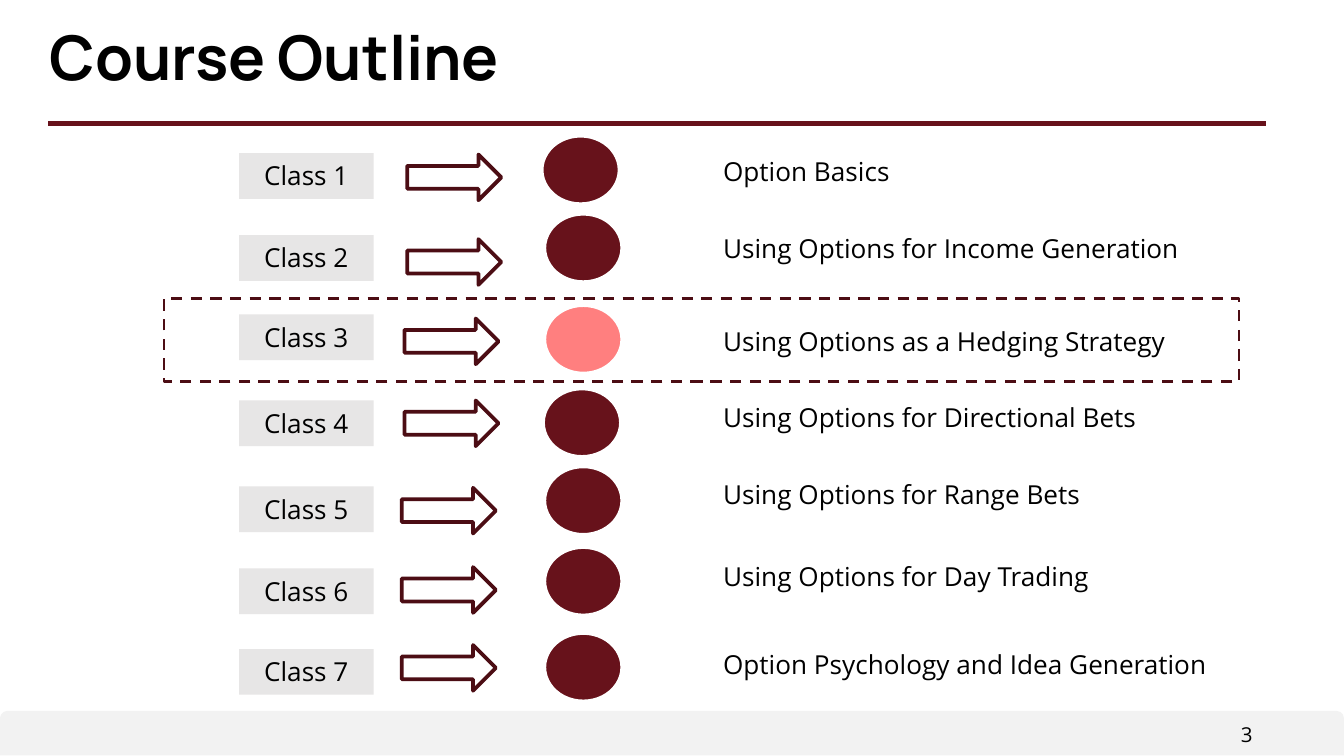
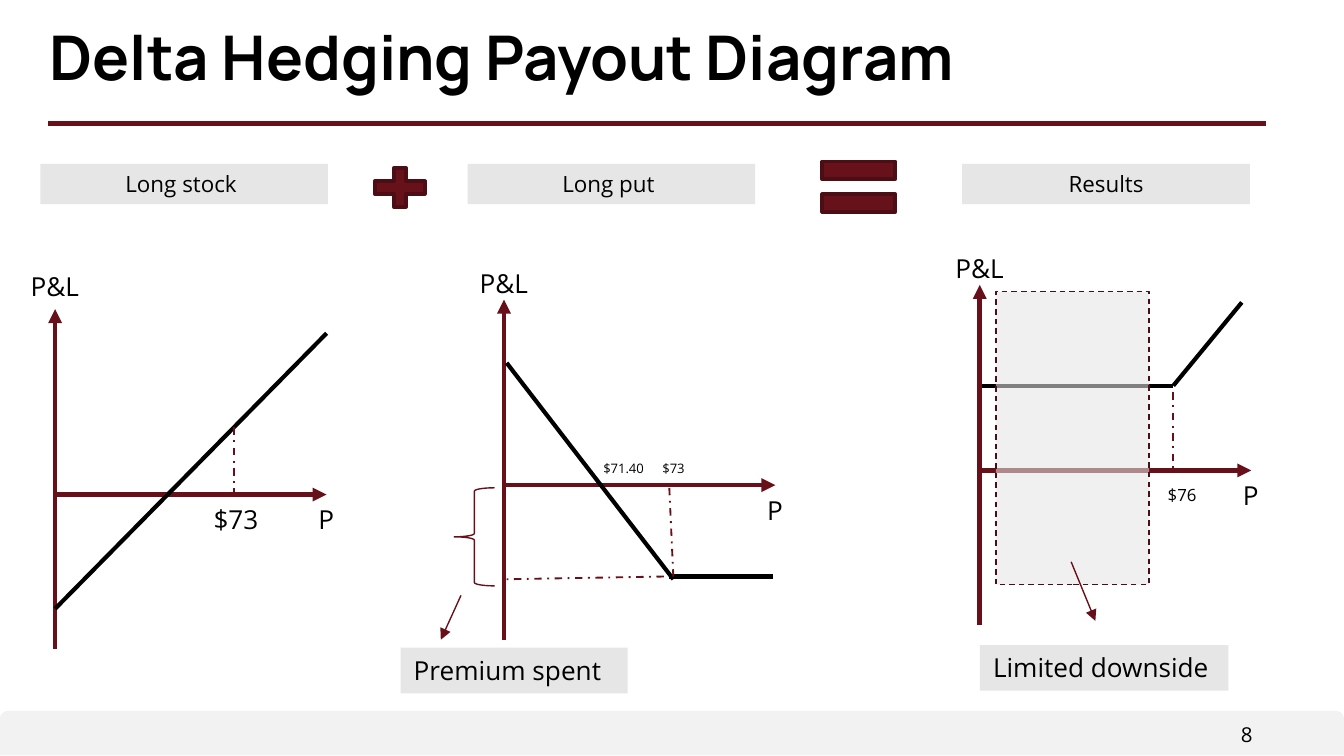
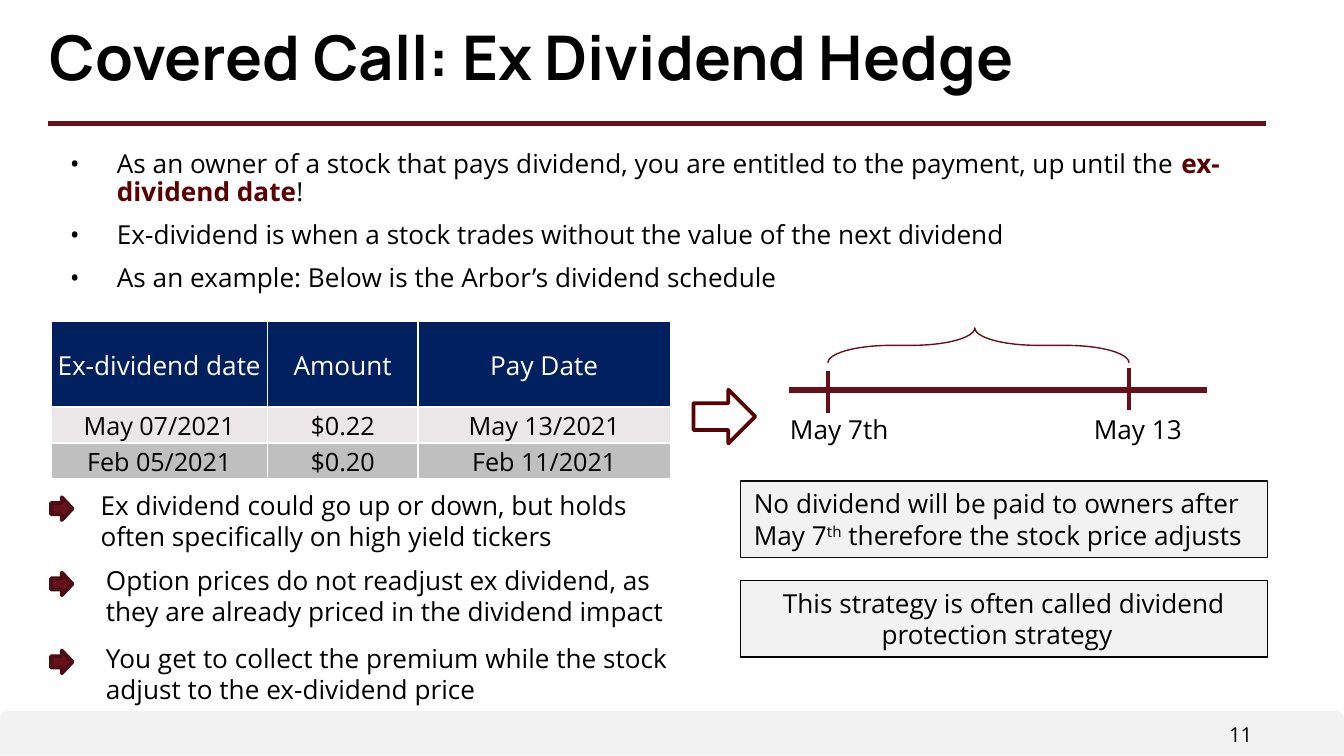
from dataclasses import dataclass
from typing import Optional, Sequence, Union

from lxml.etree import SubElement
from pptx import Presentation
from pptx.dml.color import RGBColor
from pptx.enum.dml import MSO_LINE_DASH_STYLE as Dash
from pptx.enum.shapes import MSO_CONNECTOR as Connector, MSO_SHAPE as Preset
from pptx.enum.text import MSO_ANCHOR as Anchor, MSO_AUTO_SIZE as AutoSize, PP_ALIGN as Align
from pptx.oxml.ns import qn
from pptx.util import Inches, Pt

# Shared style
SLIDE_WIDTH = Inches(10)
SLIDE_HEIGHT = SLIDE_WIDTH * 9 // 16
BLACK = RGBColor(0x00, 0x00, 0x00)
WHITE = RGBColor(0xFF, 0xFF, 0xFF)
MAROON = RGBColor(0x67, 0x12, 0x1B)
AXIS_RED = RGBColor(0x67, 0x10, 0x19)
DARK_RED = RGBColor(0x4C, 0x0D, 0x14)
ACCENT_RED = RGBColor(0x5A, 0x00, 0x00)
RED = RGBColor(0xFF, 0x00, 0x00)
LABEL_GRAY = RGBColor(0xE7, 0xE6, 0xE6)
BAND_GRAY = RGBColor(0xF2, 0xF2, 0xF2)
NAVY = RGBColor(0x00, 0x20, 0x60)
ROW_LIGHT = RGBColor(0xEB, 0xE7, 0xE8)
ROW_GRAY = RGBColor(0xBF, 0xBF, 0xBF)
NOTE_EDGE = RGBColor(0x0D, 0x0D, 0x0D)
TITLE_FONT = "Manrope"
BODY_FONT = "Open Sans"
DEFAULT_INSETS = (0.1, 0.05, 0.1, 0.05)
SLIM_INSETS = (0.07, 0.04, 0.07, 0.04)


@dataclass(frozen=True)
class Box:
    left: float
    top: float
    width: float
    height: float

    def lengths(self) -> list:
        return [Inches(v) for v in (self.left, self.top, self.width, self.height)]


@dataclass(frozen=True)
class Stroke:
    color: RGBColor
    width: float
    dash: Optional[Dash] = None


@dataclass(frozen=True)
class Span:
    text: str
    bold: bool = False
    color: Optional[RGBColor] = None
    raised: bool = False


@dataclass(frozen=True)
class TextStyle:
    size: float = 14
    align: Align = Align.LEFT
    anchor: Anchor = Anchor.TOP
    insets: tuple = DEFAULT_INSETS
    spacing: Optional[float] = None
    font: str = BODY_FONT
    bold: bool = False
    bullet: bool = False


Paragraph = Union[str, Sequence[Span]]
PLAIN = TextStyle()
CENTERED = TextStyle(align=Align.CENTER)
HEADING = TextStyle(12, Align.CENTER)
TITLE = TextStyle(33, insets=SLIM_INSETS, spacing=0.9, font=TITLE_FONT, bold=True)
TOPIC = TextStyle(anchor=Anchor.MIDDLE, insets=(0, 0.03, 0, 0.03), spacing=0.9)
BULLETS = TextStyle(insets=SLIM_INSETS, spacing=0.9, bullet=True)
PAGE_NUMBER = TextStyle(11, Align.RIGHT, insets=SLIM_INSETS)

AXIS = Stroke(AXIS_RED, 2.5)
PAYOFF = Stroke(BLACK, 2.25)
GUIDE = Stroke(AXIS_RED, 1, Dash.DASH_DOT)
THIN = Stroke(AXIS_RED, 0.75)
OUTLINE = Stroke(DARK_RED, 2)


# Drawing helpers
def add_bullet(paragraph) -> None:
    properties = paragraph._p.get_or_add_pPr()
    properties.set("marL", str(Inches(0.5)))
    properties.set("indent", str(Inches(-0.35)))
    color = SubElement(properties, qn("a:buClr"))
    SubElement(color, qn("a:srgbClr"), val=str(BLACK))
    SubElement(properties, qn("a:buFont"), typeface=BODY_FONT)
    SubElement(properties, qn("a:buChar"), char="•")


def write(frame, paragraphs: Sequence[Paragraph], style: TextStyle) -> None:
    frame.word_wrap = True
    frame.auto_size = AutoSize.NONE
    frame.vertical_anchor = style.anchor
    (frame.margin_left, frame.margin_top,
     frame.margin_right, frame.margin_bottom) = [Inches(v) for v in style.insets]
    for index, spans in enumerate(paragraphs):
        paragraph = frame.add_paragraph() if index else frame.paragraphs[0]
        paragraph.alignment = style.align
        if style.spacing:
            paragraph.line_spacing = style.spacing
        if style.bullet:
            add_bullet(paragraph)
            if index:
                paragraph.space_before = Pt(8)
        font = paragraph.font
        font.name, font.size, font.bold = style.font, Pt(style.size), style.bold
        font.color.rgb = BLACK
        for span in [Span(spans)] if isinstance(spans, str) else spans:
            run = paragraph.add_run()
            run.text = span.text
            if span.bold:
                run.font.bold = True
            if span.color:
                run.font.color.rgb = span.color
            if span.raised:
                run._r.get_or_add_rPr().set("baseline", "30000")


def add_text(slide, box: Box, paragraphs: Sequence[Paragraph], style: TextStyle = PLAIN) -> None:
    write(slide.shapes.add_textbox(*box.lengths()).text_frame, paragraphs, style)


def apply_stroke(line, stroke: Stroke) -> None:
    line.color.rgb = stroke.color
    line.width = Pt(stroke.width)
    if stroke.dash:
        line.dash_style = stroke.dash


def add_preset(slide, preset: Preset, box: Box, fill: Optional[RGBColor] = None,
               stroke: Optional[Stroke] = None, opacity: int = 100):
    shape = slide.shapes.add_shape(preset, *box.lengths())
    shape.shadow.inherit = False
    if fill is None:
        shape.fill.background()
    else:
        shape.fill.solid()
        shape.fill.fore_color.rgb = fill
        if opacity < 100:
            color = shape._element.spPr.find(qn("a:solidFill"))[0]
            SubElement(color, qn("a:alpha"), val=str(opacity * 1000))
    if stroke:
        apply_stroke(shape.line, stroke)
    else:
        shape.line.fill.background()
    return shape


def add_label(slide, box: Box, paragraph: Paragraph, style: TextStyle = PLAIN,
              fill: RGBColor = LABEL_GRAY, stroke: Optional[Stroke] = None) -> None:
    label = add_preset(slide, Preset.RECTANGLE, box, fill, stroke)
    write(label.text_frame, [paragraph], style)


def add_line(slide, start: tuple, end: tuple, stroke: Stroke, arrow: bool = False) -> None:
    line = slide.shapes.add_connector(
        Connector.STRAIGHT, *[Inches(v) for v in (*start, *end)])
    apply_stroke(line.line, stroke)
    if arrow:
        SubElement(line.line._get_or_add_ln(), qn("a:tailEnd"), type="triangle")
    SubElement(line._element.spPr, qn("a:effectLst"))


def add_titled_slide(deck, title: str, number: int):
    slide = deck.slides.add_slide(deck.slide_layouts[5])
    # Footer band, page number and title rule
    add_preset(slide, Preset.ROUND_2_SAME_RECTANGLE, Box(0, 5.29, 10, 0.33), BAND_GRAY)
    add_text(slide, Box(8.12, 5.33, 1.27, 0.25), [str(number)], PAGE_NUMBER)
    add_line(slide, (0.36, 0.92), (9.42, 0.92), Stroke(MAROON, 2.5))
    heading = slide.shapes.title
    heading.left, heading.top, heading.width, heading.height = Box(0.3, 0.16, 9.31, 0.68).lengths()
    write(heading.text_frame, [title], TITLE)
    return slide


# Course outline
@dataclass(frozen=True)
class ClassRow:
    topic: str
    label_top: float
    arrow_left: float
    arrow_top: float
    dot_left: float
    dot_top: float
    topic_top: float


CLASSES = [
    ClassRow("Option Basics", 1.14, 3.03, 1.15, 4.03, 1.01, 0.99),
    ClassRow("Using Options for Income Generation", 1.75, 3.03, 1.78, 4.05, 1.59, 1.56),
    ClassRow("Using Options as a Hedging Strategy", 2.34, 3.01, 2.37, 4.05, 2.27, 2.25),
    ClassRow("Using Options for Directional Bets", 2.98, 3.01, 2.98, 4.04, 2.89, 2.82),
    ClassRow("Using Options for Range Bets", 3.62, 2.99, 3.63, 4.05, 3.47, 3.39),
    ClassRow("Using Options for Day Trading", 4.23, 2.99, 4.22, 4.05, 4.07, 4.0),
    ClassRow("Option Psychology and Idea Generation", 4.83, 2.99, 4.8, 4.05, 4.71, 4.66),
]
CURRENT_CLASS = 3


def build_outline(deck) -> None:
    slide = add_titled_slide(deck, "Course Outline", 3)
    for number, row in enumerate(CLASSES, 1):
        current = number == CURRENT_CLASS
        add_label(slide, Box(1.78, row.label_top, 1, 0.34), f"Class {number}", CENTERED)
        add_preset(slide, Preset.RIGHT_ARROW, Box(row.arrow_left, row.arrow_top, 0.7, 0.34),
                   stroke=OUTLINE)
        add_text(slide, Box(5.38, row.topic_top, 3.71, 0.6), [row.topic], TOPIC)
        add_preset(slide, Preset.OVAL, Box(row.dot_left, row.dot_top, 0.58, 0.51),
                   RED if current else MAROON, Stroke(WHITE, 2), 50 if current else 100)
    # Frame around the current class
    add_preset(slide, Preset.RECTANGLE, Box(1.22, 2.22, 8, 0.62),
               stroke=Stroke(DARK_RED, 1.5, Dash.DASH))


# Payout diagram
@dataclass(frozen=True)
class Panel:
    heading: str
    heading_left: float
    axis_left: float
    price_axis: float
    profit_top: float


@dataclass(frozen=True)
class PriceMark:
    text: str
    box: Box
    size: float


@dataclass(frozen=True)
class Segment:
    start: tuple
    end: tuple
    stroke: Stroke
    arrow: bool = False


PANELS = [
    Panel("Long stock ", 0.3, 0.41, 3.68, 1.96),
    Panel("Long put ", 3.48, 3.75, 3.61, 1.94),
    Panel("Results", 7.16, 7.29, 3.5, 1.83),
]
PRICE_MARKS = [
    PriceMark("$73", Box(1.49, 3.7, 0.62, 0.34), 14),
    PriceMark("$71.40", Box(4.39, 3.38, 0.65, 0.22), 7),
    PriceMark("$73", Box(4.83, 3.38, 0.65, 0.22), 7),
    PriceMark("$76", Box(8.59, 3.56, 0.57, 0.25), 9),
]
SEGMENTS = [
    # Long stock
    Segment((0.41, 4.53), (2.43, 2.48), PAYOFF),
    Segment((1.74, 3.18), (1.74, 3.7), GUIDE),
    # Long put
    Segment((4.98, 4.29), (5.75, 4.29), PAYOFF),
    Segment((3.77, 2.7), (5.01, 4.31), PAYOFF),
    Segment((4.98, 3.63), (5.01, 4.29), GUIDE),
    Segment((4.94, 4.29), (3.77, 4.31), GUIDE),
    Segment((3.43, 4.43), (3.28, 4.76), THIN, True),
    # Results
    Segment((7.31, 2.87), (8.73, 2.87), PAYOFF),
    Segment((8.73, 2.87), (9.24, 2.25), PAYOFF),
    Segment((8.73, 2.92), (8.73, 3.52), GUIDE),
]


def add_panel(slide, panel: Panel) -> None:
    left, level = panel.axis_left, panel.price_axis
    add_label(slide, Box(panel.heading_left, 1.22, 2.14, 0.3), panel.heading, HEADING)
    add_line(slide, (left, level), (left + 2.02, level), AXIS, arrow=True)
    add_line(slide, (left, level + 1.15), (left, level - 1.38), AXIS, arrow=True)
    add_text(slide, Box(left + 1.86, level + 0.02, 0.3, 0.34), ["P"])
    add_text(slide, Box(left - 0.28, panel.profit_top, 0.57, 0.34), ["P&L"])


def build_payout(deck) -> None:
    slide = add_titled_slide(deck, "Delta Hedging Payout Diagram", 8)
    for panel in PANELS:
        add_panel(slide, panel)
    for mark in PRICE_MARKS:
        add_text(slide, mark.box, [mark.text], TextStyle(mark.size))
    for segment in SEGMENTS:
        add_line(slide, segment.start, segment.end, segment.stroke, segment.arrow)
    # Premium and downside callouts
    add_preset(slide, Preset.LEFT_BRACE, Box(3.38, 3.63, 0.3, 0.73), stroke=THIN)
    add_label(slide, Box(2.98, 4.82, 1.69, 0.34), "Premium spent")
    add_preset(slide, Preset.RECTANGLE, Box(7.41, 2.17, 1.14, 2.18), LABEL_GRAY,
               Stroke(DARK_RED, 0.75, Dash.DASH), 56)
    add_line(slide, (7.97, 4.18), (8.15, 4.62), THIN, arrow=True)
    add_label(slide, Box(7.29, 4.8, 1.85, 0.34), "Limited downside")
    # Operators between the headings
    equals = add_preset(slide, Preset.MATH_EQUAL, Box(6.02, 1.11, 0.74, 0.56), MAROON, OUTLINE)
    equals.adjustments[0], equals.adjustments[1] = 0.235, 0.199
    add_preset(slide, Preset.MATH_PLUS, Box(2.72, 1.2, 0.51, 0.39), MAROON, OUTLINE)


# Covered call
INTRO = [
    [Span("As an owner of a stock that pays dividend, you are entitled to the payment, up until the "),
     Span("ex-dividend date", True, ACCENT_RED), Span("!")],
    "Ex-dividend is when a stock trades without the value of the next dividend",
    "As an example: Below is the Arbor’s dividend schedule",
]
SCHEDULE = [
    ("Ex-dividend date", "Amount", "Pay Date"),
    ("May 07/2021", "$0.22", "May 13/2021"),
    ("Feb 05/2021", "$0.20", "Feb 11/2021"),
]
COLUMN_WIDTHS = (1.61, 1.12, 1.88)
ROW_HEIGHTS = (0.64, 0.23, 0.23)
ROW_FILLS = (NAVY, ROW_LIGHT, ROW_GRAY)
TAKEAWAYS = [
    (0.65, 3.59, "Ex dividend could go up or down, but holds often specifically on high yield tickers"),
    (0.69, 4.15, "Option prices do not readjust ex dividend, as they are already priced in the dividend impact"),
    (0.69, 4.73, "You get to collect the premium while the stock adjust to the ex-dividend price"),
]


def add_cell_borders(cell) -> None:
    properties = cell._tc.get_or_add_tcPr()
    for side in ("lnL", "lnR", "lnT", "lnB"):
        border = SubElement(properties, qn(f"a:{side}"), w=str(Pt(1)))
        SubElement(SubElement(border, qn("a:solidFill")), qn("a:srgbClr"), val=str(WHITE))


def add_schedule(slide) -> None:
    table = slide.shapes.add_table(3, 3, *Box(0.38, 2.39, 4.61, 1.1).lengths()).table
    table.first_row = table.horz_banding = False
    for column, width in zip(table.columns, COLUMN_WIDTHS):
        column.width = Inches(width)
    for r, values in enumerate(SCHEDULE):
        table.rows[r].height = Inches(ROW_HEIGHTS[r])
        for c, value in enumerate(values):
            cell = table.cell(r, c)
            add_cell_borders(cell)
            cell.fill.solid()
            cell.fill.fore_color.rgb = ROW_FILLS[r]
            cell.vertical_anchor = Anchor.MIDDLE
            cell.margin_left = cell.margin_top = cell.margin_right = Inches(0.01)
            cell.margin_bottom = 0
            cell.text = value
            paragraph = cell.text_frame.paragraphs[0]
            paragraph.alignment = Align.CENTER
            font = paragraph.font
            font.name, font.size = BODY_FONT, Pt(13.5 if r else 14)
            font.color.rgb = BLACK if r else WHITE


def build_covered_call(deck) -> None:
    slide = add_titled_slide(deck, "Covered Call: Ex Dividend Hedge", 11)
    add_text(slide, Box(0.3, 1.08, 9.31, 4.04), INTRO, BULLETS)
    add_schedule(slide)
    # Timeline from the ex-dividend date to the pay date
    add_preset(slide, Preset.RIGHT_ARROW, Box(5.16, 2.9, 0.46, 0.4), stroke=Stroke(ACCENT_RED, 2))
    add_line(slide, (5.87, 2.9), (8.98, 2.9), Stroke(AXIS_RED, 3))
    for date, tick, tick_top, date_left in (("May 7th", 6.16, 2.76, 5.78), ("May 13", 8.4, 2.74, 8.04)):
        add_line(slide, (tick, tick_top), (tick, tick_top + 0.31), Stroke(AXIS_RED, 2.25))
        add_text(slide, Box(date_left, 3.03, 1, 0.34), [date])
    brace = add_preset(slide, Preset.LEFT_BRACE, Box(7.15, 1.45, 0.26, 2.24), stroke=THIN)
    brace.rotation = 90
    brace.adjustments[0], brace.adjustments[1] = 1.815, 0.512
    # Takeaways with arrow markers
    for left, top, takeaway in TAKEAWAYS:
        add_text(slide, Box(left, top, 4.5, 0.57), [takeaway])
        add_preset(slide, Preset.RIGHT_ARROW, Box(0.38, top + 0.11, 0.16, 0.17), MAROON, OUTLINE)
    # Framed notes
    add_label(slide, Box(5.51, 3.58, 3.92, 0.57),
              [Span("No dividend will be paid to owners after May 7"), Span("th", raised=True),
               Span(" therefore the stock price adjusts")],
              PLAIN, BAND_GRAY, Stroke(NOTE_EDGE, 0.75))
    add_label(slide, Box(5.51, 4.32, 3.92, 0.57),
              "This strategy is often called dividend protection strategy  ",
              CENTERED, BAND_GRAY, Stroke(BLACK, 0.75))


def main() -> None:
    deck = Presentation()
    deck.slide_width, deck.slide_height = SLIDE_WIDTH, SLIDE_HEIGHT
    build_outline(deck)
    build_payout(deck)
    build_covered_call(deck)
    deck.save("out.pptx")


if __name__ == "__main__":
    main()
